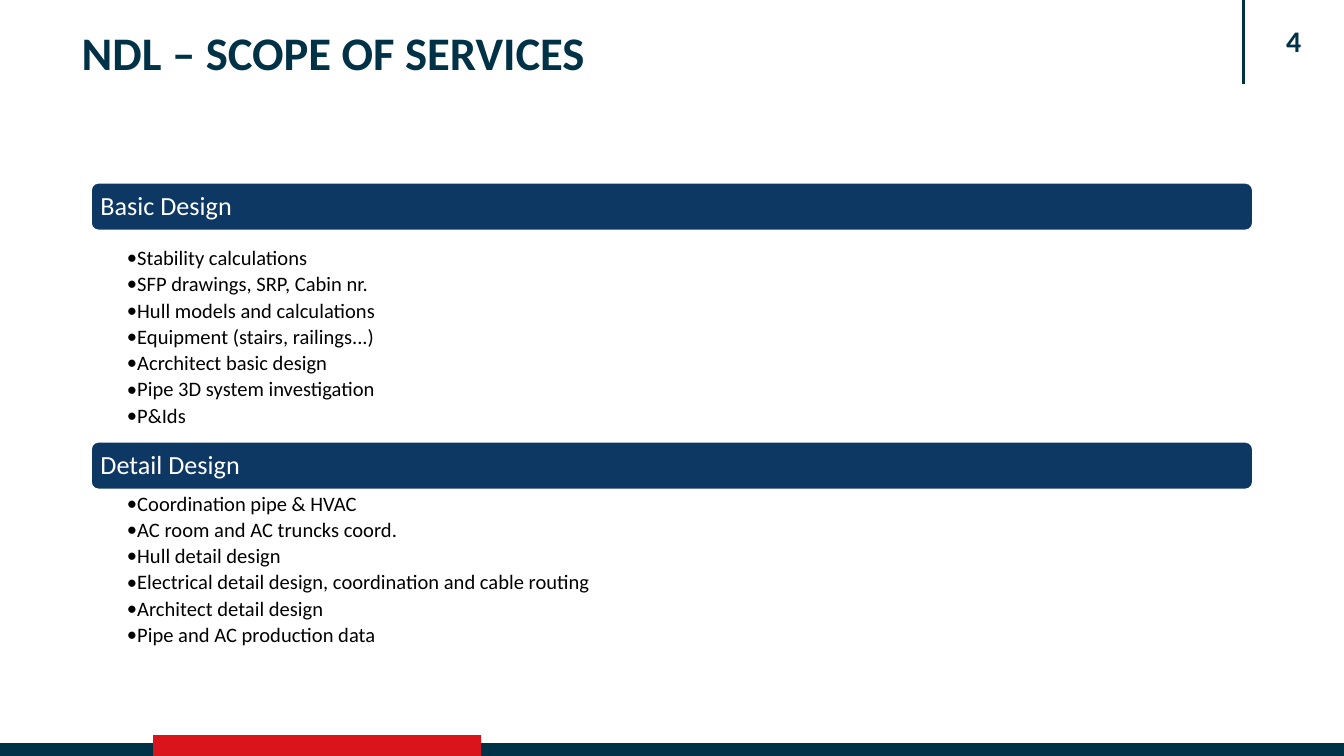
from collections import namedtuple

from lxml.etree import SubElement
from pptx import Presentation
from pptx.dml.color import RGBColor
from pptx.enum.shapes import MSO_CONNECTOR, MSO_SHAPE
from pptx.enum.text import MSO_ANCHOR, PP_ALIGN
from pptx.oxml.ns import qn
from pptx.util import Inches, Pt

WIDTH = Inches(10)
HEIGHT = WIDTH * 9 // 16
COLUMN, ROW = WIDTH / 100, HEIGHT / 100
COLORS = {"navy": "003247", "banner": "0E3864", "red": "D9141A",
          "white": "FFFFFF", "black": "000000"}
HEADING = {"size": Pt(25), "bold": True}
PAGE_NUMBER = {"size": Pt(16), "bold": True}
BANNER = {"size": Pt(14)}
SERVICE = {"size": Pt(11)}
BANNER_ROWS = 6.58

Box = namedtuple("Box", "left top width height")
Section = namedtuple("Section", "name box gap indent services")

SECTIONS = [
    Section("Basic Design", Box(6.7, 24.05, 86.6, 34.26), 1.78, 0, [
        "Stability calculations",
        "SFP drawings, SRP, Cabin nr.",
        "Hull models and calculations",
        "Equipment (stairs, railings...)",
        "Acrchitect basic design",
        "Pipe 3D system investigation",
        "P&Ids",
    ]),
    Section("Detail Design", Box(6.7, 58.31, 86.6, 28.62), 0, 0.6, [
        "Coordination pipe & HVAC",
        "AC room and AC truncks coord.",
        "Hull detail design",
        "Electrical detail design, coordination and cable routing",
        "Architect detail design",
        "Pipe and AC production data",
    ]),
]


def columns(count):
    """Return the length of a number of grid columns."""
    return round(count * COLUMN)


def rows(count):
    """Return the length of a number of grid rows."""
    return round(count * ROW)


def place(box):
    """Return a grid box as left, top, width and height lengths."""
    return columns(box.left), rows(box.top), columns(box.width), rows(box.height)


def apply(target, values):
    """Set every attribute in a dict of format values."""
    for attribute, value in values.items():
        setattr(target, attribute, value)


def write(paragraph, text, color, font_format):
    """Write one formatted line of text into a paragraph."""
    run = paragraph.add_run()
    run.text = text
    apply(run.font, {"name": "Calibri", **font_format})
    run.font.color.rgb = RGBColor.from_string(COLORS[color])


def add_block(slide, kind, box, color):
    """Add a filled shape without outline or shadow."""
    block = slide.shapes.add_shape(kind, *place(box))
    block.shadow.inherit = False
    block.fill.solid()
    block.fill.fore_color.rgb = RGBColor.from_string(COLORS[color])
    block.line.fill.background()
    return block


def add_frame(slide, box, frame_format):
    """Add a wrapping text box and return its text frame."""
    frame = slide.shapes.add_textbox(*place(box)).text_frame
    apply(frame, {"word_wrap": True, **frame_format})
    return frame


def add_title(slide, box):
    """Write the slide title."""
    frame = add_frame(slide, box, {"vertical_anchor": MSO_ANCHOR.TOP})
    write(frame.paragraphs[0], "NDL – SCOPE OF SERVICES", "navy", HEADING)


def add_page_marker(slide, box):
    """Draw the corner rule and centre the page number beside it."""
    left, top, _, height = place(box)
    rule = slide.shapes.add_connector(
        MSO_CONNECTOR.STRAIGHT, left, top, left, top + height)
    rule.line.color.rgb = RGBColor.from_string(COLORS["navy"])
    rule.line.width = Pt(1.5)
    SubElement(rule._element.spPr, qn("a:effectLst"))
    number_box = box._replace(top=box.top + 2.67, height=5.33)
    frame = add_frame(slide, number_box, {"vertical_anchor": MSO_ANCHOR.MIDDLE})
    frame.paragraphs[0].alignment = PP_ALIGN.CENTER
    write(frame.paragraphs[0], "4", "navy", PAGE_NUMBER)


def add_footer(slide, box):
    """Draw the footer band with its raised red accent."""
    band = box._replace(top=box.top + 1.07, height=box.height - 1.07)
    accent = box._replace(left=box.left + 11.4, width=24.4)
    add_block(slide, MSO_SHAPE.RECTANGLE, band, "navy")
    add_block(slide, MSO_SHAPE.RECTANGLE, accent, "red")


def add_section(slide, section):
    """Place a section banner above its bulleted services."""
    box = section.box
    banner = add_block(slide, MSO_SHAPE.ROUNDED_RECTANGLE,
                       box._replace(height=BANNER_ROWS), "banner")
    banner.line.color.rgb = RGBColor.from_string(COLORS["white"])
    banner.line.width = Pt(2)
    apply(banner.text_frame, {
        "word_wrap": True, "vertical_anchor": MSO_ANCHOR.MIDDLE,
        "margin_left": columns(0.6), "margin_right": columns(0.6),
        "margin_top": rows(1), "margin_bottom": rows(1)})
    heading = banner.text_frame.paragraphs[0]
    apply(heading, {"alignment": PP_ALIGN.LEFT, "line_spacing": 0.9})
    write(heading, section.name, "white", BANNER)

    offset = BANNER_ROWS + section.gap
    frame = add_frame(
        slide, box._replace(top=box.top + offset, height=box.height - offset),
        {"margin_left": columns(2.75), "margin_right": columns(1.1),
         "margin_top": rows(0.36), "margin_bottom": rows(0.36)})
    for index, service in enumerate(section.services):
        paragraph = frame.add_paragraph() if index else frame.paragraphs[0]
        apply(paragraph, {"level": 1, "line_spacing": 0.9,
                          "space_after": Pt(2.2)})
        properties = paragraph._p.get_or_add_pPr()
        properties.set("marL", str(columns(section.indent)))
        properties.set("indent", str(-columns(section.indent)))
        SubElement(properties, qn("a:buFont"), typeface="Calibri")
        SubElement(properties, qn("a:buChar"), char="•")
        write(paragraph, service, "black", SERVICE)


def main():
    """Build and save the scope of services slide."""
    deck = Presentation()
    apply(deck, {"slide_width": WIDTH, "slide_height": HEIGHT})
    slide = deck.slides.add_slide(deck.slide_layouts[6])
    add_footer(slide, Box(0, 97.24, 100, 3.2))
    add_page_marker(slide, Box(92.5, 0, 7.5, 11.11))
    add_title(slide, Box(5.1, 2.31, 86.6, 13.51))
    for section in SECTIONS:
        add_section(slide, section)
    deck.save("out.pptx")


if __name__ == "__main__":
    main()
